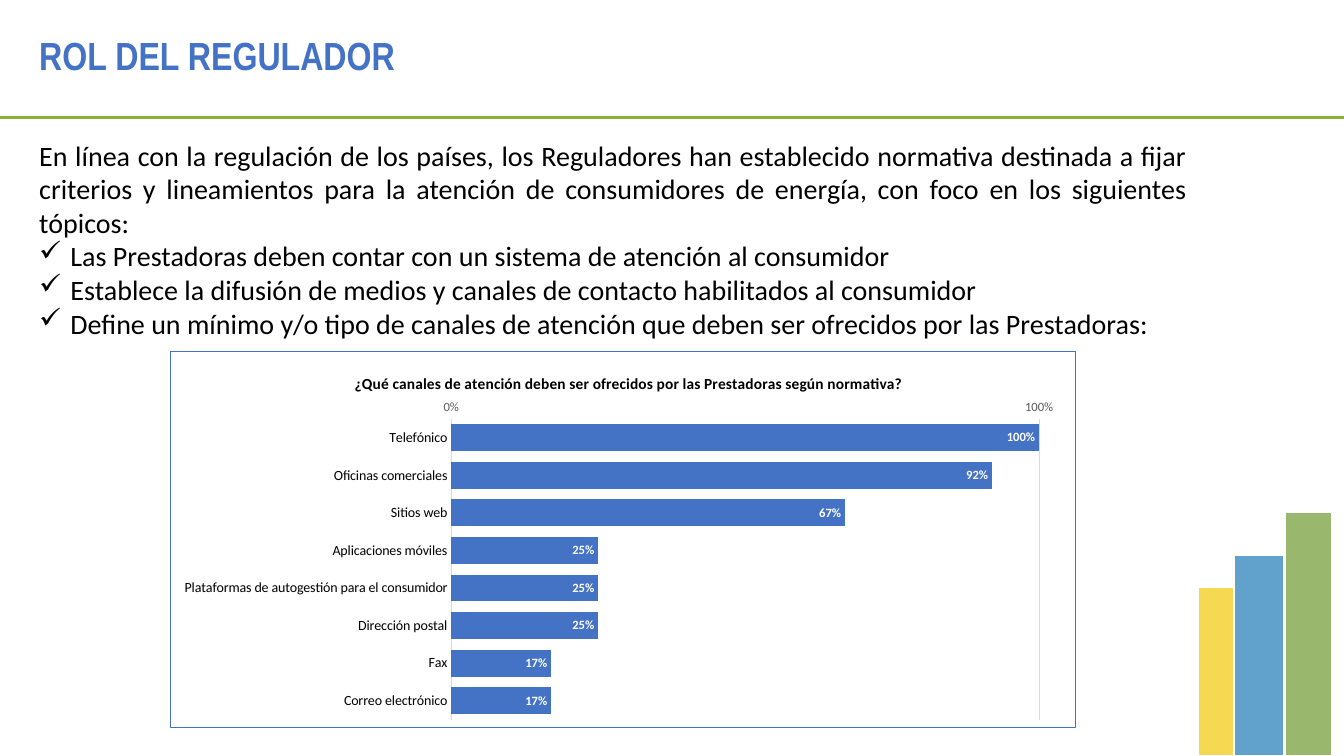
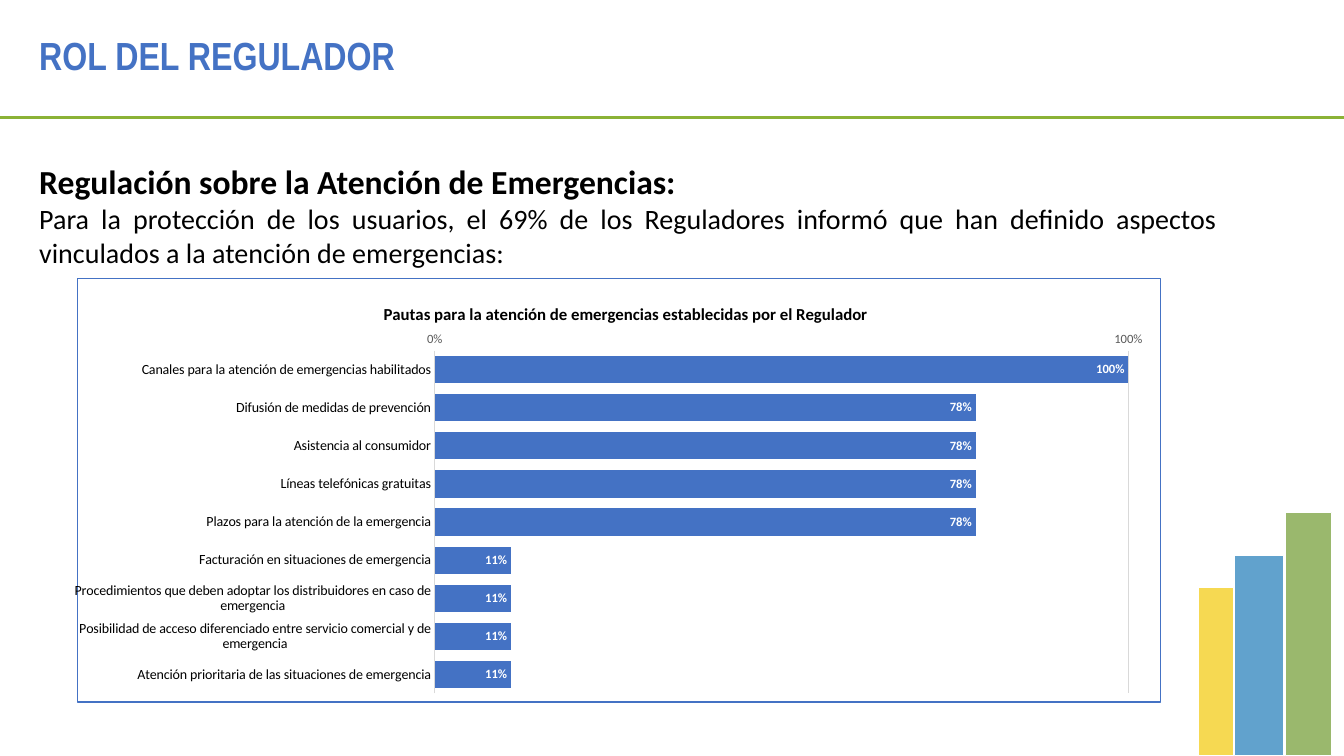
from lxml import etree
from pptx import Presentation
from pptx.chart.data import CategoryChartData
from pptx.dml.color import RGBColor
from pptx.enum.chart import XL_CHART_TYPE, XL_LABEL_POSITION, XL_TICK_MARK
from pptx.enum.shapes import MSO_CONNECTOR, MSO_SHAPE
from pptx.enum.text import MSO_ANCHOR, PP_ALIGN
from pptx.oxml import parse_xml
from pptx.oxml.ns import nsdecls, qn
from pptx.util import Inches, Pt

BAR = XL_CHART_TYPE.BAR_CLUSTERED
INNER_END = XL_LABEL_POSITION.INSIDE_END
NO_TICK = XL_TICK_MARK.NONE
LINE = MSO_CONNECTOR.STRAIGHT
RECT = MSO_SHAPE.RECTANGLE
MIDDLE = MSO_ANCHOR.MIDDLE
JUSTIFY = PP_ALIGN.JUSTIFY

BLUE = RGBColor(0x44, 0x72, 0xC4)
LIME = RGBColor(0x8B, 0xB2, 0x36)
GREEN = RGBColor(0x61, 0x91, 0x1B)
AZURE = RGBColor(0x00, 0x6A, 0xAF)
YELLOW = RGBColor(0xF3, 0xC7, 0x00)
GRAY = RGBColor(0x59, 0x59, 0x59)
PALE = RGBColor(0xD9, 0xD9, 0xD9)
WHITE = RGBColor(0xFF, 0xFF, 0xFF)
BLACK = RGBColor(0x00, 0x00, 0x00)

WIDTH, HEIGHT = Inches(13.33), Inches(7.5)
EDGE = 2.18
HEAD = dict(name="Arial Narrow", size=Pt(28), bold=True, color=BLUE)
BODY = dict(name="Calibri", size=Pt(20), bold=False, color=BLACK)
LEAD = BODY | dict(size=Pt(24), bold=True)
CATS = BODY | dict(size=Pt(10))
TICKS = BODY | dict(size=Pt(9), color=GRAY)
LABELS = BODY | dict(size=Pt(9), bold=True, color=WHITE)

# Left, width, height (percent of the slide), colour, opacity
COLUMNS = [
    (95.65, 3.45, 32.27, GREEN, 64),
    (91.82, 3.68, 26.53, AZURE, 62),
    (89.2, 2.55, 22.27, YELLOW, 68),
]

SLIDES = [
    dict(
        text=(EDGE, 17.6, 86.87, 28),
        paras=[
            ("En línea con la regulación de los países, los Reguladores han "
             "establecido normativa destinada a fijar criterios y lineamientos "
             "para la atención de consumidores de energía, con foco en los "
             "siguientes tópicos:", BODY, False),
            ("Las Prestadoras deben contar con un sistema de atención al "
             "consumidor", BODY, True),
            ("Establece la difusión de medios y canales de contacto "
             "habilitados al consumidor", BODY, True),
            ("Define un mínimo y/o tipo de canales de atención que deben ser "
             "ofrecidos por las Prestadoras:", BODY, True),
        ],
        chart=(12.68, 46.4, 67.37, 49.87),
        title="¿Qué canales de atención deben ser ofrecidos por las "
              "Prestadoras según normativa?",
        size=11, start=(0.2, 0.05), plot=(0.31, 0.18, 0.65, 0.8),
        data={
            "Telefónico": 1,
            "Oficinas comerciales": 0.92,
            "Sitios web": 0.67,
            "Aplicaciones móviles": 0.25,
            "Plataformas de autogestión para el consumidor": 0.25,
            "Dirección postal": 0.25,
            "Fax": 0.17,
            "Correo electrónico": 0.17,
        },
    ),
    dict(
        text=(EDGE, 20.67, 89.12, 16),
        paras=[
            ("Regulación sobre la Atención de Emergencias:", LEAD, False),
            ("Para la protección de los usuarios, el 69% de los Reguladores "
             "informó que han definido aspectos vinculados a la atención de "
             "emergencias:", BODY, False),
        ],
        chart=(5.55, 36.8, 80.87, 56.13),
        title="Pautas para la atención de emergencias establecidas por el "
              "Regulador",
        size=12, start=(0.28, 0.05), plot=(0.33, 0.17, 0.64, 0.81),
        data={
            "Canales para la atención de emergencias habilitados": 1,
            "Difusión de medidas de prevención": 0.78,
            "Asistencia al consumidor": 0.78,
            "Líneas telefónicas gratuitas": 0.78,
            "Plazos para la atención de la emergencia": 0.78,
            "Facturación en situaciones de emergencia": 0.11,
            "Procedimientos que deben adoptar los distribuidores en caso de "
            "emergencia": 0.11,
            "Posibilidad de acceso diferenciado entre servicio comercial y de "
            "emergencia": 0.11,
            "Atención prioritaria de las situaciones de emergencia": 0.11,
        },
    ),
]


def place(left, top, width, height):
    """Turn percents of the slide into lengths."""
    return [int(side * part / 100) for side, part in
            zip((WIDTH, HEIGHT) * 2, (left, top, width, height))]


def style(font, form):
    for key, value in form.items():
        if key == "color":
            font.color.rgb = value
        else:
            setattr(font, key, value)


def stroke(line, color, width=0.75):
    line.color.rgb = color
    line.width = Pt(width)


def add_rule(slide):
    left, top, width, _ = place(0, 15.6, 100, 0)
    rule = slide.shapes.add_connector(LINE, left, top, left + width, top)
    stroke(rule.line, LIME, 2.25)
    etree.SubElement(rule._element.spPr, qn("a:effectLst"))


def add_columns(slide):
    for left, width, height, color, alpha in COLUMNS:
        box = place(left, 100 - height, width, height)
        column = slide.shapes.add_shape(RECT, *box)
        column.shadow.inherit = False
        column.fill.solid()
        column.fill.fore_color.rgb = color
        tint = column._element.spPr.find(".//" + qn("a:srgbClr"))
        etree.SubElement(tint, qn("a:alpha"), val=str(alpha * 1000))
        stroke(column.line, WHITE)


def add_check(para):
    props = para._p.get_or_add_pPr()
    indent = Inches(0.31)
    props.set("marL", str(indent))
    props.set("indent", str(-indent))
    etree.SubElement(props, qn("a:buChar"), char="✓")


def add_text(slide, box, paras, align=None, anchor=None):
    """Write (text, format, checked) paragraphs in one box."""
    frame = slide.shapes.add_textbox(*place(*box)).text_frame
    frame.word_wrap = True
    frame.vertical_anchor = anchor
    for index, (text, form, checked) in enumerate(paras):
        para = frame.add_paragraph() if index else frame.paragraphs[0]
        para.alignment = align
        if checked:
            add_check(para)
        run = para.add_run()
        run.text = text
        style(run.font, form)


def set_layout(parent, index, values, inner=False):
    """Fix a chart part at shares of the chart's size."""
    for old in parent.findall(qn("c:layout")):
        parent.remove(old)
    layout = etree.Element(qn("c:layout"))
    manual = etree.SubElement(layout, qn("c:manualLayout"))
    if inner:
        etree.SubElement(manual, qn("c:layoutTarget"), val="inner")
    for tag in ("xMode", "yMode"):
        etree.SubElement(manual, qn("c:" + tag), val="edge")
    for tag, value in zip("xywh", values):
        etree.SubElement(manual, qn("c:" + tag), val=str(value))
    parent.insert(index, layout)


def set_frame(space):
    """Give the chart area its white fill and blue border."""
    space.find(qn("c:chart")).addnext(parse_xml(
        f'<c:spPr {nsdecls("c", "a")}>'
        f'<a:solidFill><a:srgbClr val="{WHITE}"/></a:solidFill>'
        f'<a:ln w="{Pt(0.75)}"><a:solidFill><a:srgbClr val="{BLUE}"/>'
        '</a:solidFill></a:ln></c:spPr>'))


def set_axes(chart):
    cats, vals = chart.category_axis, chart.value_axis
    for axis, form in ((cats, CATS), (vals, TICKS)):
        axis.major_tick_mark = axis.minor_tick_mark = NO_TICK
        style(axis.tick_labels.font, form)
    cats.reverse_order = True
    cats.has_major_gridlines = False
    stroke(cats.format.line, PALE)
    vals.minimum_scale, vals.maximum_scale, vals.major_unit = 0, 1, 1
    vals.has_major_gridlines = True
    stroke(vals.major_gridlines.format.line, PALE)
    vals.format.line.fill.background()
    vals.tick_labels.number_format = "0%"
    vals.tick_labels.number_format_is_linked = False


def set_bars(plot):
    plot.gap_width = 40
    plot.vary_by_categories = False
    fill = plot.series[0].format.fill
    fill.solid()
    fill.fore_color.rgb = BLUE
    plot.has_data_labels = True
    labels = plot.data_labels
    form = dict(show_value=True, position=INNER_END, number_format="0%",
                number_format_is_linked=False)
    for key, value in form.items():
        setattr(labels, key, value)
    style(labels.font, LABELS)


def add_bars(slide, box, title, size, start, plot, data):
    source = CategoryChartData(number_format="0%")
    source.categories = list(data)
    source.add_series("Series 1", list(data.values()))
    chart = slide.shapes.add_chart(BAR, *place(*box), source).chart
    style(chart.font, CATS)
    chart.has_legend = False
    chart.has_title = True
    run = chart.chart_title.text_frame.paragraphs[0].add_run()
    run.text = title
    style(run.font, BODY | dict(size=Pt(size), bold=True))
    set_axes(chart)
    set_bars(chart.plots[0])
    space = chart._chartSpace
    set_layout(space.find(".//" + qn("c:title")), 1, start)
    set_layout(space.find(".//" + qn("c:plotArea")), 0, plot, inner=True)
    set_frame(space)


def add_slide(deck, text, paras, chart, **bars):
    slide = deck.slides.add_slide(deck.slide_layouts[6])
    add_rule(slide)
    add_columns(slide)
    add_text(slide, (EDGE, 3.47, 69, 7.6),
             [("ROL DEL REGULADOR", HEAD, False)], anchor=MIDDLE)
    add_text(slide, text, paras, align=JUSTIFY)
    add_bars(slide, chart, **bars)


def main():
    deck = Presentation()
    deck.slide_width, deck.slide_height = WIDTH, HEIGHT
    for content in SLIDES:
        add_slide(deck, **content)
    deck.save("out.pptx")


if __name__ == "__main__":
    main()
